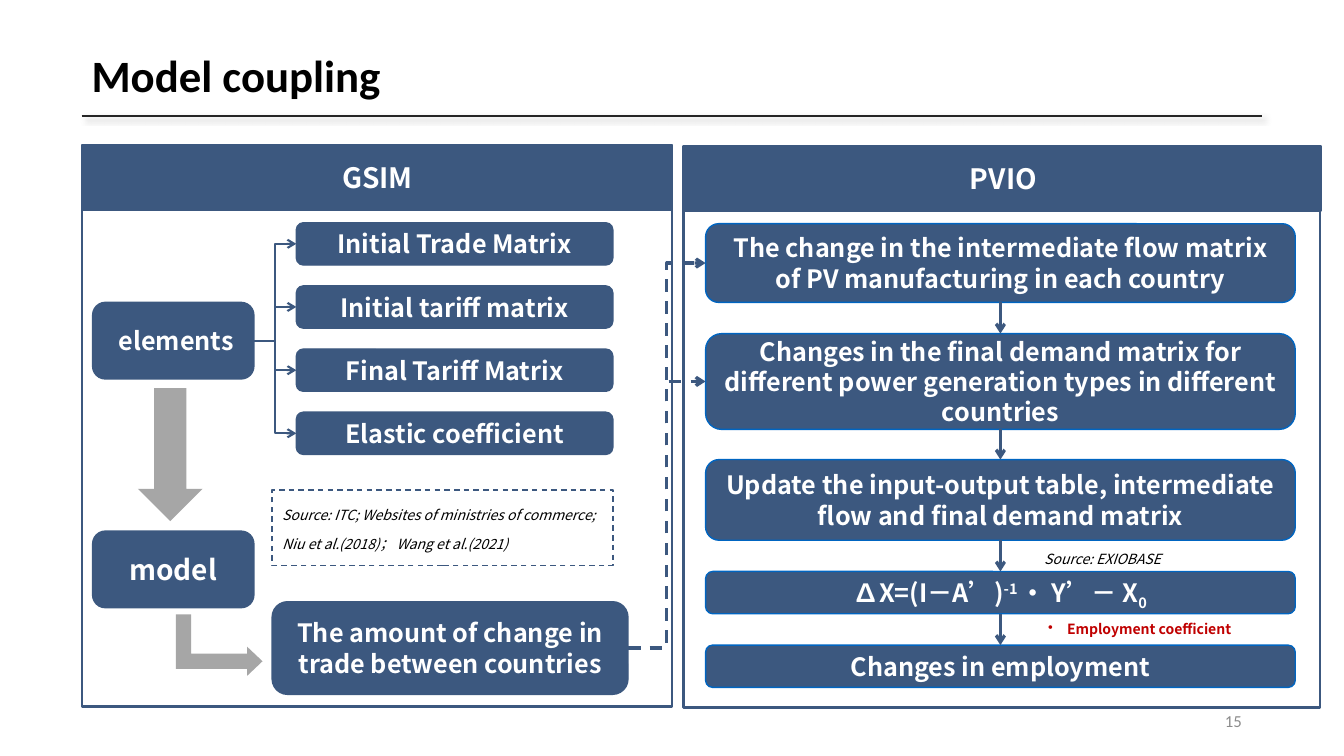
from lxml import etree
from pptx import Presentation
from pptx.dml.color import RGBColor
from pptx.enum import dml, shapes, text
from pptx.oxml import ns
from pptx.util import Pt

NAVY, BLUE, GREY = "3C587F", "0065C1", "A6A6A6"
WHITE, BLACK, RED = "FFFFFF", "000000", "C00000"
BODY, HEADING = "Noto Sans CJK SC", "Calibri"
LEFT, CENTER, RIGHT = text.PP_ALIGN.LEFT, text.PP_ALIGN.CENTER, text.PP_ALIGN.RIGHT
TOP, MIDDLE = text.MSO_ANCHOR.TOP, text.MSO_ANCHOR.MIDDLE
SHAPE, CONNECTOR = shapes.MSO_SHAPE, shapes.MSO_CONNECTOR
TOP_SIDE, LEFT_SIDE, BOTTOM_SIDE, RIGHT_SIDE = range(4)


def color(value):
    return RGBColor.from_string(value)


def add_xml(parent, tag, **attributes):
    return etree.SubElement(parent, ns.qn(tag), attributes)


class Sketch:
    """Draws styled elements on one slide; all lengths are points."""

    def __init__(self, slide):
        self.shapes = slide.shapes

    def put_text(self, shape, words, size, ink=WHITE, font=BODY, bold=False, italic=False,
                 align=CENTER, anchor=MIDDLE, spacing=None):
        """Fill a shape with one paragraph; words is a string or (string, baseline) pairs."""
        frame = shape.text_frame
        frame.word_wrap = True
        frame.vertical_anchor = anchor
        para = frame.paragraphs[0]
        para.alignment = align
        if spacing:
            para.line_spacing = spacing
        style = para.font
        style.name, style.size, style.bold, style.italic = font, Pt(size), bold, italic
        style.color.rgb = color(ink)
        add_xml(para._p.pPr.find(ns.qn("a:defRPr")), "a:ea", typeface=font)
        for words_part, baseline in [(words, 0)] if isinstance(words, str) else words:
            span = para.add_run()
            span.text = words_part
            if baseline:
                span._r.get_or_add_rPr().set("baseline", str(baseline * 1000))
        return para

    def shape(self, kind, place, fill=None, line=None, weight=1, dashed=False):
        shape = self.shapes.add_shape(kind, *map(Pt, place))
        shape.shadow.inherit = False
        if fill:
            shape.fill.solid()
            shape.fill.fore_color.rgb = color(fill)
        else:
            shape.fill.background()
        if line:
            shape.line.color.rgb = color(line)
            shape.line.width = Pt(weight)
        else:
            shape.line.fill.background()
        if dashed:
            shape.line.dash_style = dml.MSO_LINE.DASH
        return shape

    def box(self, words, place, line=NAVY, size=18, spacing=None):
        box = self.shape(SHAPE.ROUNDED_RECTANGLE, place, NAVY, line)
        self.put_text(box, words, size, bold=True, spacing=spacing)
        return box

    def panel(self, heading, frame, header):
        self.shape(SHAPE.RECTANGLE, frame, WHITE, NAVY, 1.5)
        bar = self.shape(SHAPE.RECTANGLE, header, NAVY, NAVY, 1.5)
        self.put_text(bar, heading, 20, bold=True)

    def label(self, words, place, size, **style):
        label = self.shapes.add_textbox(*map(Pt, place))
        return self.put_text(label, words, size, **style)

    def line(self, start, end, ink, weight, kind=CONNECTOR.STRAIGHT):
        line = self.shapes.add_connector(kind, *map(Pt, start + end))
        line.line.color.rgb = color(ink)
        line.line.width = Pt(weight)
        effects = add_xml(line._element.spPr, "a:effectLst")
        return line, effects

    def arrow(self, source, source_side, target, target_side, weight,
              kind=CONNECTOR.STRAIGHT, dashed=False):
        arrow, _ = self.line((0, 0), (0, 0), NAVY, weight, kind)
        arrow.begin_connect(source, source_side)
        arrow.end_connect(target, target_side)
        if dashed:
            arrow.line.dash_style = dml.MSO_LINE.DASH
        add_xml(arrow.line._get_or_add_ln(), "a:tailEnd", type="arrow")


def draw_heading(sketch):
    sketch.label("Model coupling", (58.3, 28.8, 828, 54), 32, ink=BLACK, font=HEADING,
                 bold=True, align=LEFT, anchor=MIDDLE, spacing=0.9)
    sketch.label("15", (678.2, 500.4, 216, 28.8), 12, ink="8C8C8C", font=HEADING,
                 align=RIGHT, anchor=MIDDLE)
    _, effects = sketch.line((58.3, 82.8), (901.4, 82.8), "262626", 1)
    shadow = add_xml(effects, "a:outerShdw", blurRad=str(Pt(4)), dist=str(Pt(3)),
                     dir=str(45 * 60000), algn="tl", rotWithShape="0")
    add_xml(add_xml(shadow, "a:srgbClr", val="808080"), "a:alpha", val="40000")


def draw_gsim(sketch):
    """Draw the left panel and return its result box."""
    sketch.panel("GSIM", (58.3, 103.7, 422, 401), (59, 103.7, 421.2, 46))
    elements = sketch.box(" elements", (66.2, 216, 115.2, 54.7))
    sketch.box("model", (66.2, 379.4, 115.2, 54.7), size=20)
    inputs = ["Initial Trade Matrix", "Initial tariff matrix",
              "Final Tariff Matrix", "Elastic coefficient"]
    for row, words in enumerate(inputs):
        box = sketch.box(words, (211.7, 159.1 + 45.1 * row, 226.1, 30.2))
        sketch.arrow(elements, RIGHT_SIDE, box, LEFT_SIDE, 1.5, CONNECTOR.ELBOW)
    sketch.shape(SHAPE.DOWN_ARROW, (98.6, 277.2, 46.1, 95), GREY)
    sources = sketch.shape(SHAPE.RECTANGLE, (194.4, 349.9, 243.4, 54), None, NAVY, dashed=True)
    sketch.put_text(sources, "Source: ITC; Websites of ministries of commerce; "
                    "Niu et al.(2018)； Wang et al.(2021)", 10, ink=BLACK, italic=True,
                    align=LEFT, anchor=TOP, spacing=1.7)
    turn = sketch.shape(SHAPE.BENT_UP_ARROW, (134.6, 429.8, 43.9, 61.9), GREY)
    turn.rotation = 90
    turn.adjustments[1] = 0.236
    return sketch.box("The amount of change in trade between countries",
                      (194.4, 429.8, 254.2, 66.2))


def draw_pvio(sketch):
    """Draw the right panel and return its chain of boxes."""
    sketch.panel("PVIO", (488.2, 104.4, 455, 401), (489.6, 104.4, 454.3, 46))
    formula = [("∆X=(I－A’)", 0), ("-1 ", 30), ("• Y’－ X", 0), ("0", -25)]
    steps = [
        ("The change in the intermediate flow matrix of PV manufacturing in each country",
         159.8, 56.2, None),
        ("Changes in the final demand matrix for different power generation types "
         "in different countries", 238.3, 68.4, None),
        ("Update the input-output table, intermediate flow and final demand matrix",
         328.3, 57.6, None),
        (formula, 408.2, 30.2, 1.1),
        ("Changes in employment", 460.8, 30.2, None),
    ]
    chain = [sketch.box(words, (504, top, 421.2, height), BLUE, spacing=spacing)
             for words, top, height, spacing in steps]
    for upper, lower in zip(chain, chain[1:]):
        sketch.arrow(upper, BOTTOM_SIDE, lower, TOP_SIDE, 2.25)
    sketch.label("Source: EXIOBASE", (738.7, 385.9, 153.4, 20.2), 10, ink=BLACK,
                 italic=True, align=LEFT, anchor=TOP, spacing=1.3)
    note = sketch.label("Employment coefficient", (741.6, 439.9, 150.5, 19.4), 10, ink=RED,
                        bold=True, align=LEFT, anchor=TOP)
    properties = note._p.pPr
    properties.set("marL", str(Pt(13.5)))
    properties.set("indent", str(Pt(-13.5)))
    bullet = etree.Element(ns.qn("a:buChar"), char="•")
    properties.find(ns.qn("a:defRPr")).addprevious(bullet)
    return chain


def main():
    deck = Presentation()
    deck.slide_width, deck.slide_height = Pt(960), Pt(540)
    sketch = Sketch(deck.slides.add_slide(deck.slide_layouts[6]))
    draw_heading(sketch)
    chain = draw_pvio(sketch)
    trade_change = draw_gsim(sketch)
    for target in chain[:2]:
        sketch.arrow(trade_change, RIGHT_SIDE, target, LEFT_SIDE, 2.25,
                     CONNECTOR.ELBOW, dashed=True)
    deck.save("out.pptx")


if __name__ == "__main__":
    main()
